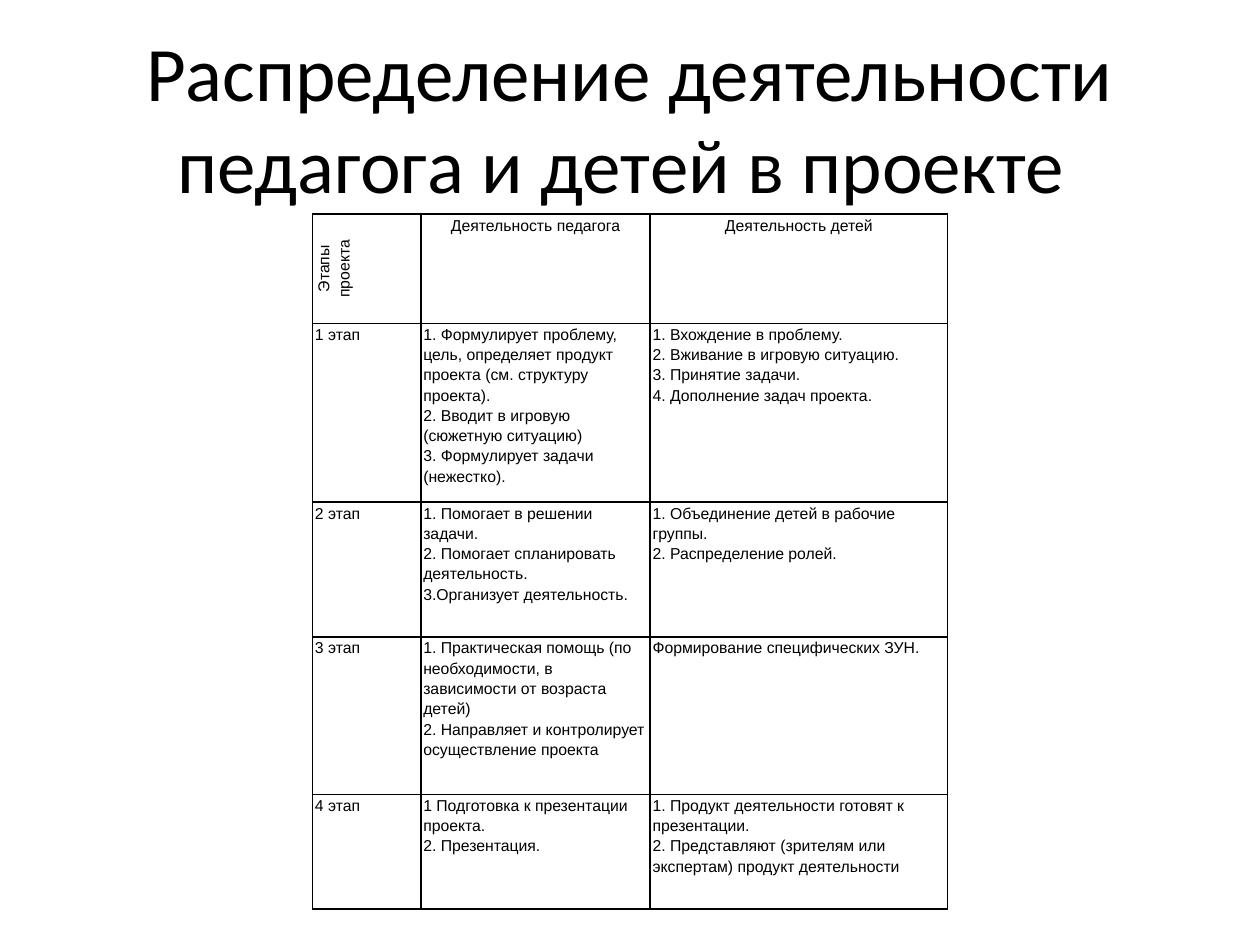
"""Build a slide with a table of teacher and children activities by project stage."""
import pptx
import pptx.dml.color
import pptx.enum.text
import pptx.oxml
import pptx.oxml.ns
import pptx.util

BLACK = pptx.dml.color.RGBColor(0, 0, 0)
WHITE = pptx.dml.color.RGBColor(255, 255, 255)
CENTER = pptx.enum.text.PP_ALIGN.CENTER
LEFT = pptx.enum.text.PP_ALIGN.LEFT
Inches = pptx.util.Inches
Pt = pptx.util.Pt

TITLE = "Распределение деятельности педагога и детей в проекте "
HEADER = [["Этапы проекта"], ["Деятельность педагога"], ["Деятельность детей"]]
STAGES = [
    (["1 этап"],
     ["1. Формулирует проблему,", "цель, определяет продукт",
      "проекта (см. структуру проекта).",
      "2. Вводит в игровую (сюжетную ситуацию)",
      "3. Формулирует задачи (нежестко)."],
     ["1. Вхождение в проблему.", "2. Вживание в игровую ситуацию.",
      "3. Принятие задачи.", "4. Дополнение задач проекта."]),
    (["2 этап"],
     ["1. Помогает в решении задачи.", "2. Помогает спланировать",
      "деятельность.", "3.Организует деятельность."],
     ["1. Объединение детей в рабочие группы.", "2. Распределение ролей."]),
    (["3 этап"],
     ["1. Практическая помощь (по необходимости, в зависимости от возраста детей)",
      "2. Направляет и контролирует осуществление проекта"],
     ["Формирование специфических ЗУН."]),
    (["4 этап"],
     ["1 Подготовка к презентации проекта.", "2. Презентация."],
     ["1. Продукт деятельности готовят к презентации.",
      "2. Представляют (зрителям или экспертам) продукт деятельности"]),
]
COL_WIDTHS = [0.86, 1.82, 2.36]
ROW_HEIGHTS = [0.55, 1.42, 1.07, 1.25, 0.91]
TABLE_TOP = 1.7
CELL_MARGINS = {"margin_left": Inches(0.02), "margin_right": Inches(0.02),
                "margin_top": 0, "margin_bottom": 0}


def set_attrs(target, values):
    for name, value in values.items():
        setattr(target, name, value)


def write(tf, lines, size, face, **paragraph_format):
    for i, line in enumerate(lines):
        p = tf.add_paragraph() if i else tf.paragraphs[0]
        set_attrs(p, paragraph_format)
        r = p.add_run()
        r.text = line
        set_attrs(r.font, {"size": Pt(size), "name": face})
        r.font.color.rgb = BLACK


def add_borders(cell):
    tc_pr = cell._tc.get_or_add_tcPr()
    for side in "LRTB":
        tc_pr.append(pptx.oxml.parse_xml(
            f'<a:ln{side} {pptx.oxml.ns.nsdecls("a")} w="{Pt(1)}">'
            f'<a:solidFill><a:srgbClr val="{BLACK}"/></a:solidFill></a:ln{side}>'))


def add_title(s, prs):
    sp = s.shapes.add_textbox(int(prs.slide_width * 0.05), int(prs.slide_height * 0.04),
                              int(prs.slide_width * 0.9), Inches(1.25))
    tf = sp.text_frame
    set_attrs(tf, {"word_wrap": True,
                   "vertical_anchor": pptx.enum.text.MSO_ANCHOR.MIDDLE})
    write(tf, [TITLE], 44, "Calibri", alignment=CENTER)


def add_stage_table(s, prs):
    rows = [HEADER, *STAGES]
    width, height = Inches(sum(COL_WIDTHS)), Inches(sum(ROW_HEIGHTS))
    table = s.shapes.add_table(len(rows), len(COL_WIDTHS), (prs.slide_width - width) // 2,
                               Inches(TABLE_TOP), width, height).table
    set_attrs(table, {"first_row": False, "horz_banding": False})
    for column, size in zip(table.columns, COL_WIDTHS):
        column.width = Inches(size)
    for row, size in zip(table.rows, ROW_HEIGHTS):
        row.height = Inches(size)
    for i, row in enumerate(rows):
        for j, lines in enumerate(row):
            cell = table.cell(i, j)
            set_attrs(cell, CELL_MARGINS)
            add_borders(cell)
            cell.fill.solid()
            cell.fill.fore_color.rgb = WHITE
            write(cell.text_frame, lines, 9, "Arial",
                  alignment=LEFT if i else CENTER, line_spacing=1.15)
    table.cell(0, 0)._tc.get_or_add_tcPr().set("vert", "vert270")


def main():
    prs = pptx.Presentation()
    set_attrs(prs, {"slide_width": Inches(10), "slide_height": Inches(7.5)})
    s = prs.slides.add_slide(prs.slide_layouts[6])
    add_title(s, prs)
    add_stage_table(s, prs)
    prs.save("out.pptx")


if __name__ == "__main__":
    main()
